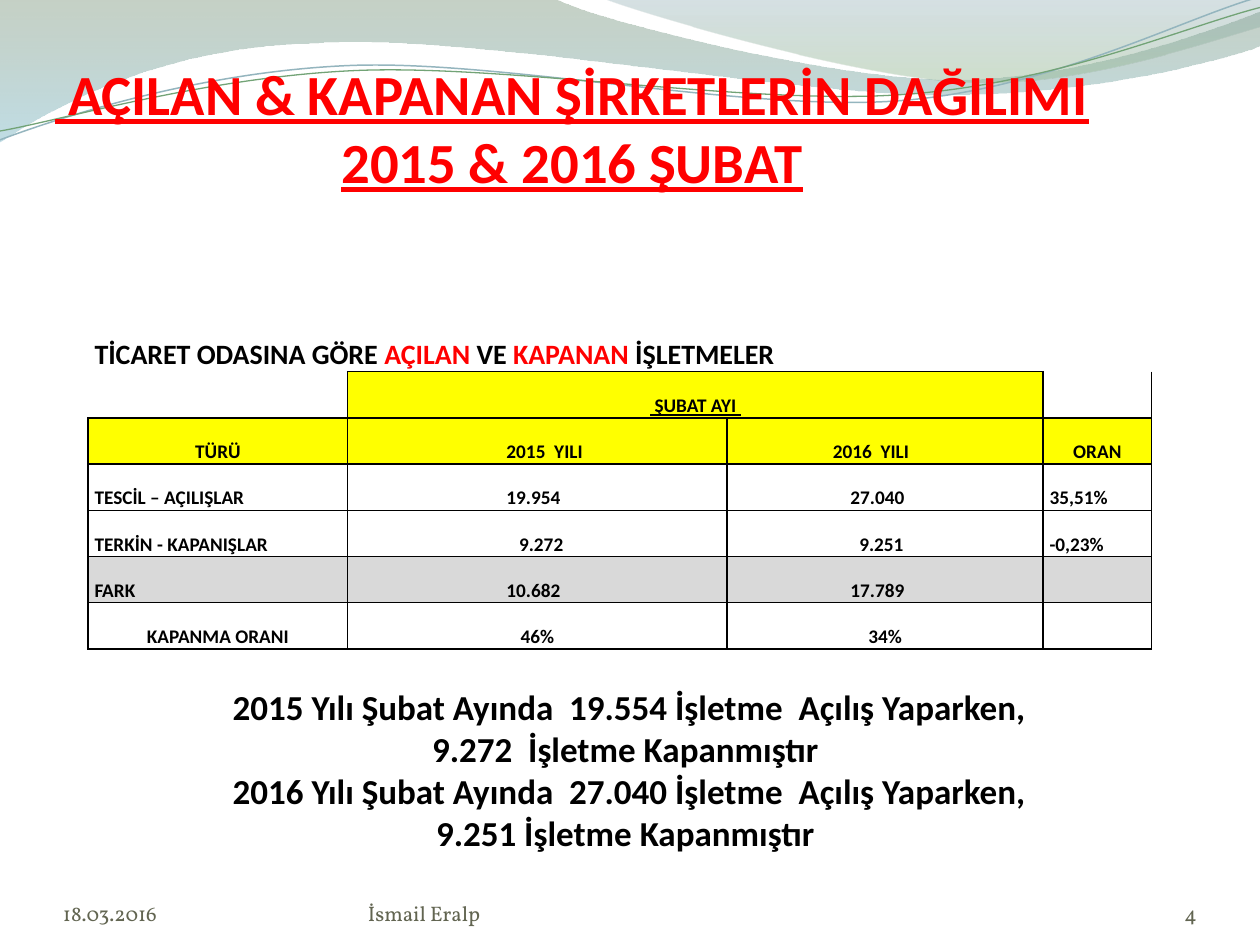
"""Build the slide on companies opened and closed in February 2015 and 2016."""
from dataclasses import dataclass
from math import cos, radians, sin
from typing import Any, Optional

from lxml.etree import SubElement
from pptx import Presentation
from pptx.dml.color import RGBColor
from pptx.enum.text import MSO_ANCHOR, MSO_AUTO_SIZE, PP_ALIGN
from pptx.oxml import parse_xml
from pptx.oxml.ns import nsdecls, qn
from pptx.util import Inches, Pt

HUES = {
    "red": "FF0000", "black": "000000", "yellow": "FFFF00", "gray": "D9D9D9",
    "foot": "626551", "sage": "809980", "sky": "8DC1CF", "slate": "779BA4",
    "leaf": "96B996", "blue": "94B5BE", "green": "72A376",
}
LEFT, MID, RIGHT = PP_ALIGN.LEFT, PP_ALIGN.CENTER, PP_ALIGN.RIGHT
PAD = 0.05
TILT = -2.7
PLAIN = "{2D5ABB26-0587-4C30-8999-92F81FD0307C}"
COLS = [2.06, 3.01, 2.51, 0.86]
ROWS = [0.53] + [2.2 / 6] * 6


@dataclass
class Stop:
    """One gradient stop with its opacity in percent."""
    place: float
    hue: str
    alpha: int


@dataclass
class Wave:
    """A band or a line; six numbers are a curve, two are a corner."""
    start: tuple[float, float]
    legs: list[tuple[float, ...]]
    stops: tuple[Stop, ...] = ()
    hue: str = ""
    width: float = 0
    hub: tuple[float, float] = (0, 0)
    tilt: float = 0


@dataclass
class Bit:
    """One run of text."""
    text: str
    hue: str = "black"
    size: float = 11
    bold: bool = True
    line: bool = False
    font: str = "Calibri"


@dataclass
class Box:
    """One text box with its paragraphs."""
    rect: tuple[float, float, float, float]
    paras: list[list[Bit]]
    align: Any = LEFT
    anchor: Any = MSO_ANCHOR.BOTTOM
    pads: tuple[float, float] = (0, 0)


@dataclass
class Slot:
    """One filled cell of the table."""
    row: int
    col: int
    bits: list[Bit]
    align: Any = LEFT
    dent: float = 0
    span: int = 1


WAVES = [
    Wave((0, 0), [(4.4, -0.01), (4.76, 0.17, 6.64, 0.63, 7.58, 0.63),
                  (8.53, 0.63, 9.58, 0.26, 10, 0.09), (10.01, 0.36),
                  (9.83, 0.44, 8.7, 0.76, 7.46, 0.75),
                  (6.22, 0.75, 3.82, 0.28, 2.57, 0.34),
                  (1.29, 0.36, 0.46, 0.83, -0.01, 1.13), (0, 0)],
         stops=(Stop(0, "sage", 45), Stop(1, "sky", 55))),
    Wave((4.79, -0.01), [(5.09, 0.11, 6.82, 0.62, 7.69, 0.65),
                         (8.56, 0.69, 9.61, 0.32, 10, 0.21), (10, 0), (4.79, -0.01)],
         stops=(Stop(0, "slate", 30), Stop(0.8, "leaf", 45))),
    Wave((0, 1.11), [(0.48, 0.93, 1.58, 0.57, 2.77, 0.52),
                     (3.95, 0.47, 5.93, 0.89, 7.13, 0.8),
                     (8.33, 0.71, 9.38, 0.15, 9.98, -0.02)],
         hue="blue", width=0.85, hub=(4.99, 0.58), tilt=TILT),
    Wave((0, 1.04), [(0.47, 0.96, 1.64, 0.61, 2.83, 0.56),
                     (4.03, 0.51, 5.97, 0.84, 7.17, 0.75),
                     (8.36, 0.67, 9.41, 0.21, 10, 0.06)],
         hue="green", width=0.75, hub=(5, 0.59), tilt=TILT),
]

BODY = ["2015 Yılı Şubat Ayında  19.554 İşletme  Açılış Yaparken,",
        "9.272  İşletme Kapanmıştır ",
        "2016 Yılı Şubat Ayında  27.040 İşletme  Açılış Yaparken,",
        "9.251 İşletme Kapanmıştır "]


def foot(text: str) -> list[list[Bit]]:
    """Give the paragraphs of a footer text."""
    return [[Bit(text, "foot", 12, False, font="Vollkorn")]]


BOXES = [
    Box((0.62, 5.39, 8.75, 1.75), [[Bit(line, size=20)] for line in BODY],
        MID, MSO_ANCHOR.TOP, (0.1, 0.05)),
    Box((8.67, 6.95, 0.83, 0.4), foot("4"), RIGHT),
    Box((0.5, 6.95, 2.33, 0.4), foot("18.03.2016")),
    Box((2.92, 6.95, 3.67, 0.4), foot("İsmail Eralp")),
]

SLOTS = [
    Slot(0, 0, [Bit("TİCARET ODASINA GÖRE ", size=16), Bit("AÇILAN", "red", 16),
                Bit(" VE ", size=16), Bit("KAPANAN", "red", 16),
                Bit(" İŞLETMELER", size=16)], span=4),
    Slot(1, 1, [Bit(" ŞUBAT AYI ", line=True)], MID, span=2),
    Slot(2, 0, [Bit("TÜRÜ")], MID),
    Slot(2, 1, [Bit("2015  YILI")], dent=1.21),
    Slot(2, 2, [Bit("2016  YILI")], dent=0.79),
    Slot(2, 3, [Bit(" ORAN ")], MID),
    Slot(3, 0, [Bit("TESCİL – AÇILIŞLAR")]),
    Slot(3, 1, [Bit("19.954")], dent=1.21),
    Slot(3, 2, [Bit("27.040")], dent=0.93),
    Slot(3, 3, [Bit("35,51%")]),
    Slot(4, 0, [Bit("TERKİN - KAPANIŞLAR")]),
    Slot(4, 1, [Bit("9.272")], dent=1.31),
    Slot(4, 2, [Bit("9.251")], dent=1),
    Slot(4, 3, [Bit("-0,23%")]),
    Slot(5, 0, [Bit("FARK")]),
    Slot(5, 1, [Bit("10.682")], dent=1.21),
    Slot(5, 2, [Bit("17.789")], dent=0.93),
    Slot(6, 0, [Bit("KAPANMA ORANI")], MID),
    Slot(6, 1, [Bit("46%")], MID),
    Slot(6, 2, [Bit("34%")], MID),
]


def tint(name: str) -> RGBColor:
    """Look up a colour."""
    return RGBColor.from_string(HUES[name])


def turn(wave: Wave, x: float, y: float) -> tuple[int, int]:
    """Turn a point back by the tilt of its wave."""
    (mx, my), a = wave.hub, radians(-wave.tilt)
    dx, dy = x - mx, y - my
    return (Inches(mx + dx * cos(a) - dy * sin(a)),
            Inches(my + dx * sin(a) + dy * cos(a)))


def bend(shape: Any, wave: Wave) -> None:
    """Join the three points of each curved leg into one curve."""
    lines = shape._element.spPr.iter(qn("a:lnTo"))
    queue = iter(list(lines))
    for leg in wave.legs:
        group = [next(queue) for _ in range(len(leg) // 2)]
        if len(group) == 3:
            curve = parse_xml(f'<a:cubicBezTo {nsdecls("a")}/>')
            group[0].addprevious(curve)
            for line in group:
                curve.append(line[0])
                line.getparent().remove(line)


def draw(slide: Any, wave: Wave) -> None:
    """Draw a wave as a shaded band or a thin line."""
    pen = slide.shapes.build_freeform(*turn(wave, *wave.start))
    spots = [turn(wave, *leg[i:i + 2]) for leg in wave.legs for i in range(0, len(leg), 2)]
    pen.add_line_segments(spots, close=bool(wave.stops))
    shape = pen.convert_to_shape()
    bend(shape, wave)
    shape.rotation = wave.tilt
    shape.shadow.inherit = False
    if not wave.stops:
        shape.fill.background()
        shape.line.color.rgb = tint(wave.hue)
        shape.line.width = Pt(wave.width)
        return
    shape.line.fill.background()
    shape.fill.gradient()
    shape.fill.gradient_angle = 270
    for mark, stop in zip(shape.fill.gradient_stops, wave.stops):
        mark.position = stop.place
        mark.color.rgb = tint(stop.hue)
    shades = shape._element.spPr.find(qn("a:gradFill")).iter(qn("a:srgbClr"))
    for shade, stop in zip(shades, wave.stops):
        SubElement(shade, qn("a:alpha")).set("val", str(stop.alpha * 1000))


def write(para: Any, bits: list[Bit], align: Any) -> None:
    """Add runs to a paragraph."""
    para.alignment = align
    for bit in bits:
        run = para.add_run()
        run.text = bit.text
        font = run.font
        font.name, font.size = bit.font, Pt(bit.size)
        font.bold, font.underline = bit.bold, bit.line
        font.color.rgb = tint(bit.hue)


def fill(shape: Any, box: Box) -> None:
    """Place a text shape and write its paragraphs."""
    shape.left, shape.top, shape.width, shape.height = map(Inches, box.rect)
    frame = shape.text_frame
    frame.word_wrap, frame.auto_size = True, MSO_AUTO_SIZE.NONE
    frame.vertical_anchor = box.anchor
    frame.margin_left = frame.margin_right = Inches(box.pads[0])
    frame.margin_top = frame.margin_bottom = Inches(box.pads[1])
    for num, bits in enumerate(box.paras):
        write(frame.add_paragraph() if num else frame.paragraphs[0], bits, box.align)


def edge(cell: Any, sides: str) -> None:
    """Rule the given sides of a cell."""
    props = cell._tc.get_or_add_tcPr()
    for num, side in enumerate(s for s in "LRTB" if s in sides):
        props.insert(num, parse_xml(
            f'<a:ln{side} {nsdecls("a")} w="{Pt(1)}"><a:solidFill>'
            f'<a:srgbClr val="{HUES["black"]}"/></a:solidFill></a:ln{side}>'))


def shade(row: int, col: int) -> Optional[str]:
    """Choose the fill of a cell."""
    if row == 2 or (row == 1 and col in (1, 2)):
        return "yellow"
    return "gray" if row == 5 else None


def grid(slide: Any) -> None:
    """Build the table."""
    rect = (0.7, 2.42, sum(COLS), sum(ROWS))
    table = slide.shapes.add_table(len(ROWS), len(COLS), *map(Inches, rect)).table
    table.first_row = table.horz_banding = False
    table._tbl.tblPr.find(qn("a:tableStyleId")).text = PLAIN
    for col, width in zip(table.columns, COLS):
        col.width = Inches(width)
    rims = {(1, 0): "RB", (1, 3): "LB"}
    for r, high in enumerate(ROWS):
        table.rows[r].height = Inches(high)
        for c in range(len(COLS)):
            cell = table.cell(r, c)
            cell.margin_left = cell.margin_right = Inches(PAD)
            cell.margin_top = cell.margin_bottom = 0
            cell.vertical_anchor = MSO_ANCHOR.BOTTOM
            hue = shade(r, c)
            if hue:
                cell.fill.solid()
                cell.fill.fore_color.rgb = tint(hue)
            else:
                cell.fill.background()
            edge(cell, rims.get((r, c), "LRTB") if r else "")
    for slot in SLOTS:
        cell = table.cell(slot.row, slot.col)
        if slot.span > 1:
            cell.merge(table.cell(slot.row, slot.col + slot.span - 1))
        cell.margin_left = Inches(PAD + slot.dent)
        para = cell.text_frame.paragraphs[0]
        para.line_spacing = 1.15
        write(para, slot.bits, slot.align)


def main() -> None:
    """Build and save the slide."""
    deck = Presentation()
    deck.slide_width, deck.slide_height = Inches(10), Inches(7.5)
    slide = deck.slides.add_slide(deck.slide_layouts[5])
    for wave in WAVES:
        draw(slide, wave)
    title = slide.shapes.title
    slide.shapes._spTree.append(title._element)
    fill(title, Box((0, 0.52, 9.08, 1.03), [[
        Bit(" ", "red", 32.4, False, True),
        Bit("AÇILAN & KAPANAN ŞİRKETLERİN DAĞILIMI 2015 & 2016 ŞUBAT",
            "red", 32.4, True, True)]], MID))
    for box in BOXES:
        fill(slide.shapes.add_textbox(0, 0, 0, 0), box)
    grid(slide)
    deck.save("out.pptx")


if __name__ == "__main__":
    main()
